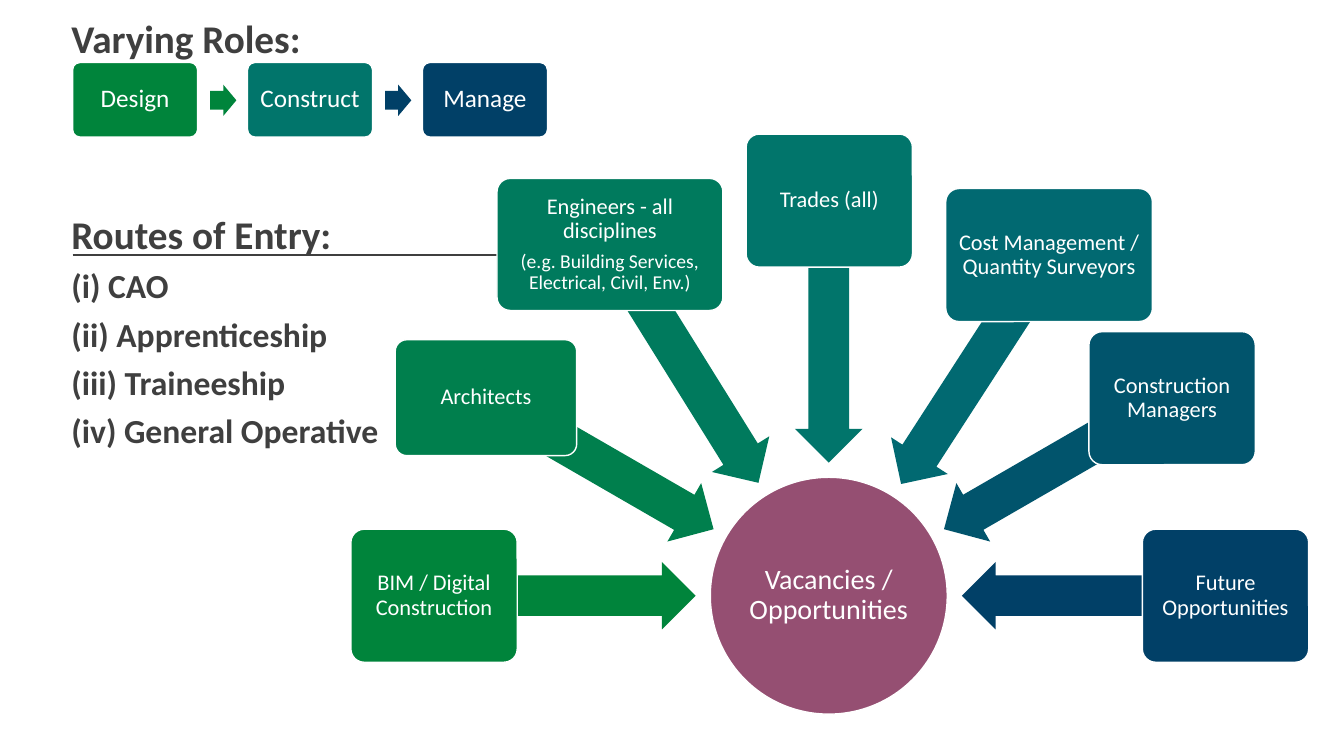
from math import cos, radians, sin

from lxml.etree import SubElement
from pptx import Presentation
from pptx.dml.color import RGBColor
from pptx.enum.shapes import MSO_CONNECTOR, MSO_SHAPE
from pptx.enum.text import MSO_ANCHOR, PP_ALIGN
from pptx.oxml.ns import qn
from pptx.util import Inches, Pt

FONT, DARK, WHITE = "Calibri", "3F3F3F", "FFFFFF"

# top, then lines of (text, size)
HEADS = [
    (1.94, [("Routes of Entry:", 28), ("(i) CAO", 24), ("(ii) Apprenticeship", 24),
            ("(iii) Traineeship", 24), ("(iv) General Operative", 24)]),
    (0, [("Varying Roles:", 28)]),
]
ROLES = [("Design", "00843B"), ("Construct", "01756B"), ("Manage", "014067")]
HUB = ("Vacancies / Opportunities", "954F72")

# paragraphs, colour, box, arrow angle, arrow length
JOBS = [
    ([("BIM / Digital Construction", 16)], "00843B", (3.48, 5.25, 1.65, 1.32), 180, 2.6),
    ([("Architects", 16)], "007F4D", (3.92, 3.37, 1.8, 1.15), 210, 2.6),
    ([("Engineers - all disciplines", 16),
      ("(e.g. Building Services, Electrical, Civil, Env.)", 14)],
     "007A5D", (4.93, 1.77, 2.24, 1.31), 238.1, 2.77),
    ([("Trades (all)", 16)], "01756B", (7.4, 1.33, 1.65, 1.32), 270, 2.6),
    ([("Cost Management / Quantity Surveyors", 16)],
     "016971", (9.38, 1.87, 2.05, 1.32), 302.9, 2.69),
    ([("Construction Managers", 16)], "01546C", (10.8, 3.29, 1.65, 1.32), 330, 2.6),
    ([("Future Opportunities", 16)], "014067", (11.33, 5.25, 1.65, 1.32), 0, 2.6),
]

HUB_X, HUB_Y, HUB_D = 8.22, 5.91, 2.35
TIP, THICK = 1.32, 0.67  # arrow tip to hub centre, arrow width
ROLE_X, ROLE_Y, ROLE_W, ROLE_H, STEP = 0.72, 0.62, 1.24, 0.74, 1.735


def color(code):
    return RGBColor.from_string(code)


def add_run(para, text, size, code, bold=False):
    run = para.add_run()
    run.text = text
    font = run.font
    font.name, font.size, font.bold = FONT, Pt(size), bold
    font.color.rgb = color(code)


def add_form(slide, kind, box, code, edge=False):
    """Add a filled shape, with a thin white edge if asked."""
    form = slide.shapes.add_shape(kind, *map(Inches, box))
    form.shadow.inherit = False
    form.fill.solid()
    form.fill.fore_color.rgb = color(code)
    if edge:
        form.line.color.rgb = color(WHITE)
        form.line.width = Pt(1)
    else:
        form.line.fill.background()
    return form


def add_arrow(slide, kind, box, code, turn=0):
    arrow = add_form(slide, kind, box, code)
    arrow.adjustments[0] = 0.6
    arrow.adjustments[1] = 0.5
    arrow.rotation = turn


def add_label(form, lines, inset):
    """Put centred white paragraphs in a shape."""
    frame = form.text_frame
    frame.word_wrap = True
    frame.vertical_anchor = MSO_ANCHOR.MIDDLE
    frame.margin_left = frame.margin_right = Inches(inset)
    frame.margin_top = frame.margin_bottom = Inches(inset)
    for i, (text, size) in enumerate(lines):
        para = frame.add_paragraph() if i else frame.paragraphs[0]
        para.alignment = PP_ALIGN.CENTER
        para.line_spacing = 0.9
        para.space_after = Pt(0.35 * size)
        add_run(para, text, size, WHITE)


def add_card(slide, box, code, lines, inset):
    card = add_form(slide, MSO_SHAPE.ROUNDED_RECTANGLE, box, code, edge=True)
    card.adjustments[0] = 0.1
    add_label(card, lines, inset)


def add_head(slide, top, lines):
    area = slide.shapes.add_textbox(Inches(0.61), Inches(top), Inches(3.98), Inches(2.11))
    area.text_frame.word_wrap = True
    para = area.text_frame.paragraphs[0]
    para.line_spacing = 1.2
    para.space_before = para.space_after = Pt(3)
    for i, (text, size) in enumerate(lines):
        if i:
            para.add_line_break()
        add_run(para, text, size, DARK, bold=True)


def add_rule(slide):
    y = Inches(2.53)
    rule = slide.shapes.add_connector(
        MSO_CONNECTOR.STRAIGHT, Inches(0.72), y, Inches(5.22), y)
    rule.line.color.rgb = color(DARK)
    rule.line.width = Pt(1.5)
    SubElement(rule._element.spPr, qn("a:effectLst"))


def add_hub(slide):
    box = (HUB_X - HUB_D / 2, HUB_Y - HUB_D / 2, HUB_D, HUB_D)
    text, code = HUB
    hub = add_form(slide, MSO_SHAPE.OVAL, box, code, edge=True)
    add_label(hub, [(text, 20)], 0.01)


def add_jobs(slide):
    for lines, code, box, angle, length in JOBS:
        reach = TIP + length / 2
        x = HUB_X + reach * cos(radians(angle))
        y = HUB_Y + reach * sin(radians(angle))
        place = (x - length / 2, y - THICK / 2, length, THICK)
        add_arrow(slide, MSO_SHAPE.LEFT_ARROW, place, code, angle)
        add_card(slide, box, code, lines, 0.03)


def add_roles(slide):
    for i, (text, code) in enumerate(ROLES):
        x = ROLE_X + i * STEP
        if i:
            # the first arrow takes the colour of the first role
            tint = ROLES[0][1] if i == 1 else code
            add_arrow(slide, MSO_SHAPE.RIGHT_ARROW, (x - 0.37, 0.84, 0.26, 0.31), tint)
        add_card(slide, (x, ROLE_Y, ROLE_W, ROLE_H), code, [(text, 18)], 0.07)


def main():
    deck = Presentation()
    deck.slide_width, deck.slide_height = Inches(13.33), Inches(7.5)
    slide = deck.slides.add_slide(deck.slide_layouts[6])
    for top, lines in HEADS:
        add_head(slide, top, lines)
    add_rule(slide)
    add_hub(slide)
    add_jobs(slide)
    add_roles(slide)
    deck.save("out.pptx")


if __name__ == "__main__":
    main()
